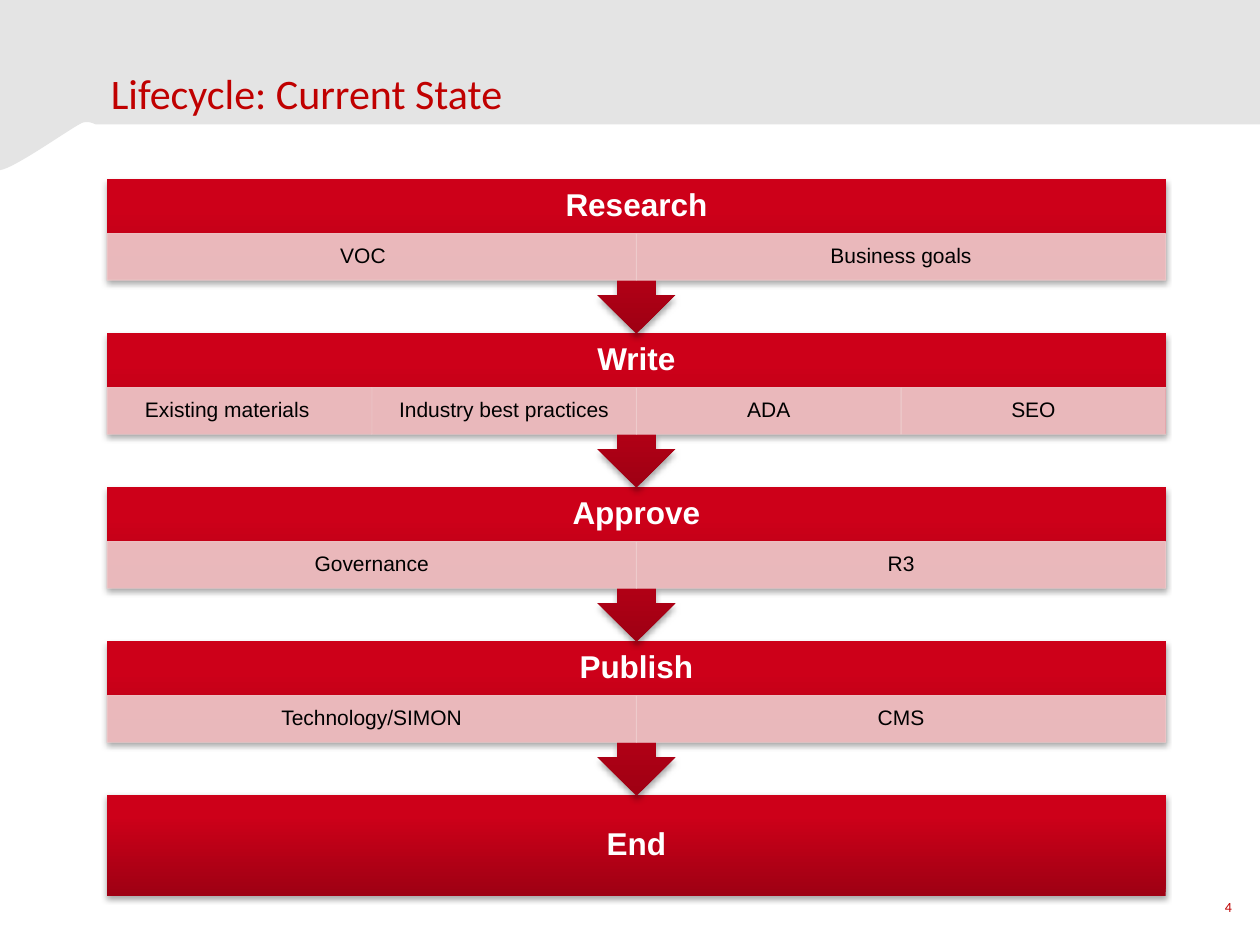
from dataclasses import dataclass

import lxml.etree
import pptx
import pptx.dml.color
import pptx.enum.shapes
import pptx.enum.text
import pptx.oxml.ns
import pptx.util
from pptx.util import Cm

SHAPES = pptx.enum.shapes.MSO_SHAPE
ANCHOR = pptx.enum.text.MSO_ANCHOR
ALIGN = pptx.enum.text.PP_ALIGN
qn = pptx.oxml.ns.qn


@dataclass(frozen=True)
class Theme:
    heading_font: str = "Calibri"
    body_font: str = "Arial"
    band: str = "E4E4E4"
    title: str = "C00000"
    stage_text: str = "FFFFFF"
    step_text: str = "000000"
    step_fill: str = "EFCCCD"
    step_opacity: int = 90
    stage_gradient: tuple = ((0, "9E0013"), (80, "CD0019"), (100, "CE0019"))
    title_size: int = 24
    stage_size: int = 18
    step_size: int = 12
    number_size: int = 8


@dataclass(frozen=True)
class Stage:
    name: str
    steps: tuple[str, ...] = ()


THEME = Theme()
STAGES = (
    Stage("Research", ("VOC\t", "Business goals")),
    Stage("Write", ("Existing materials\t", "Industry best practices", "ADA", "SEO")),
    Stage("Approve", ("Governance", "R3")),
    Stage("Publish", ("Technology/SIMON", "CMS")),
    Stage("End"),
)

LEFT, WIDTH = 2.16, 21.34
FIRST_TOP, LAST_TOP = 3.61, 16.03
PITCH = (LAST_TOP - FIRST_TOP) / (len(STAGES) - 1)
CALLOUT_HEIGHT, END_HEIGHT = 3.12, 2.03
HEADER_HEIGHT, STEP_HEIGHT = 1.1, 0.94


def rgb(value: str) -> pptx.dml.color.RGBColor:
    return pptx.dml.color.RGBColor.from_string(value)


def write(shape, text: str, font: str, size: int, color: str, align, anchor,
          bold: bool = False, line_spacing: float = 1.0) -> None:
    frame = shape.text_frame
    frame.text = text
    frame.word_wrap = True
    frame.vertical_anchor = anchor
    paragraph = frame.paragraphs[0]
    paragraph.alignment = align
    paragraph.line_spacing = line_spacing
    for run in paragraph.runs:
        run.font.name = font
        run.font.size = pptx.util.Pt(size)
        run.font.bold = bold
        run.font.color.rgb = rgb(color)


def set_insets(shape, side: float, top: float, bottom: float) -> None:
    frame = shape.text_frame
    frame.margin_left = frame.margin_right = Cm(side)
    frame.margin_top, frame.margin_bottom = Cm(top), Cm(bottom)


def add_color(parent, color: str, opacity: int = 100) -> None:
    element = lxml.etree.SubElement(parent, qn("a:srgbClr"), val=color)
    if opacity < 100:
        lxml.etree.SubElement(element, qn("a:alpha"), val=str(opacity * 1000))


def fill_with_gradient(shape) -> None:
    """Run the stage gradient from the bottom edge to the top."""
    shape.fill.gradient()
    shape.fill.gradient_angle = 90
    stops = shape._element.spPr.find(".//" + qn("a:gsLst"))
    for stop in list(stops):
        stops.remove(stop)
    for position, color in THEME.stage_gradient:
        stop = lxml.etree.SubElement(stops, qn("a:gs"), pos=str(position * 1000))
        add_color(stop, color)


def add_soft_shadow(shape) -> None:
    shape.shadow.inherit = False
    effects = shape._element.spPr.find(qn("a:effectLst"))
    shadow = lxml.etree.SubElement(effects, qn("a:outerShdw"), blurRad="40000",
                                   dist="23000", dir="5400000", rotWithShape="0")
    add_color(shadow, "000000", 35)


def add_step(slide, text: str, left: float, top: float, width: float) -> None:
    step = slide.shapes.add_shape(SHAPES.RECTANGLE, Cm(left), Cm(top),
                                  Cm(width), Cm(STEP_HEIGHT))
    step.shadow.inherit = False
    step.line.width = pptx.util.Pt(0.5)
    for fill in (step.fill, step.line.fill):
        fill.solid()
        fill.fore_color.rgb = rgb(THEME.step_fill)
    for color in step._element.spPr.iter(qn("a:srgbClr")):
        lxml.etree.SubElement(color, qn("a:alpha"), val=str(THEME.step_opacity * 1000))
    write(step, text, THEME.body_font, THEME.step_size, THEME.step_text,
          ALIGN.CENTER, ANCHOR.MIDDLE, line_spacing=0.9)
    set_insets(step, 0.23, 0.05, 0.05)


def add_stage(slide, stage: Stage, top: float) -> None:
    """Draw a stage; one with steps points down to the next stage."""
    if stage.steps:
        preset, height, bottom_inset = SHAPES.DOWN_ARROW_CALLOUT, CALLOUT_HEIGHT, STEP_HEIGHT
    else:
        preset, height, bottom_inset = SHAPES.RECTANGLE, END_HEIGHT, 0
    header = slide.shapes.add_shape(preset, Cm(LEFT), Cm(top), Cm(WIDTH), Cm(height))
    fill_with_gradient(header)
    header.line.fill.background()
    add_soft_shadow(header)
    write(header, stage.name, THEME.body_font, THEME.stage_size, THEME.stage_text,
          ALIGN.CENTER, ANCHOR.MIDDLE, bold=True, line_spacing=0.9)
    set_insets(header, 0.36, 0, bottom_inset)
    for index, step in enumerate(stage.steps):
        step_width = WIDTH / len(stage.steps)
        add_step(slide, step, LEFT + index * step_width, top + HEADER_HEIGHT, step_width)


def curve(points: tuple, pieces: int = 16) -> list[tuple[float, float]]:
    """Return points along a cubic Bezier curve, without its start."""
    sampled = []
    for piece in range(1, pieces + 1):
        t = piece / pieces
        weights = ((1 - t) ** 3, 3 * t * (1 - t) ** 2, 3 * t ** 2 * (1 - t), t ** 3)
        sampled.append(tuple(sum(w * point[axis] for w, point in zip(weights, points))
                             for axis in (0, 1)))
    return sampled


def add_header_band(slide) -> None:
    shoulder, crest, tail = (1.93, 2.51), (1.63, 2.49), (0, 3.43)
    outline = [(25.4, 0), (25.4, 2.51), shoulder]
    outline += curve((shoulder, (1.83, 2.46), (1.73, 2.44), crest))
    outline += curve((crest, (1.3, 2.67), (0.28, 3.4), tail))
    builder = slide.shapes.build_freeform(0, 0)
    builder.add_line_segments([(Cm(x), Cm(y)) for x, y in outline], close=True)
    band = builder.convert_to_shape()
    band.fill.solid()
    band.fill.fore_color.rgb = rgb(THEME.band)
    band.line.fill.background()
    band.shadow.inherit = False
    slide.shapes._spTree.insert(2, band._element)


def add_title(slide, text: str) -> None:
    title = slide.shapes.title
    title.left, title.top, title.width, title.height = Cm(1.98), Cm(0.1), Cm(22.15), Cm(2.41)
    write(title, text, THEME.heading_font, THEME.title_size, THEME.title,
          ALIGN.LEFT, ANCHOR.BOTTOM)


def add_page_number(slide, number: str) -> None:
    page = slide.shapes.add_textbox(Cm(24.13), Cm(17.78), Cm(1.27), Cm(1.02))
    write(page, number, THEME.heading_font, THEME.number_size, THEME.title,
          ALIGN.CENTER, ANCHOR.MIDDLE)


def main() -> None:
    presentation = pptx.Presentation()
    presentation.slide_width, presentation.slide_height = Cm(25.4), Cm(19.05)
    slide = presentation.slides.add_slide(presentation.slide_layouts.get_by_name("Title Only"))
    add_header_band(slide)
    add_title(slide, "Lifecycle: Current State")
    add_page_number(slide, "4")
    for index, stage in reversed(list(enumerate(STAGES))):
        add_stage(slide, stage, FIRST_TOP + index * PITCH)
    presentation.save("out.pptx")


if __name__ == "__main__":
    main()
